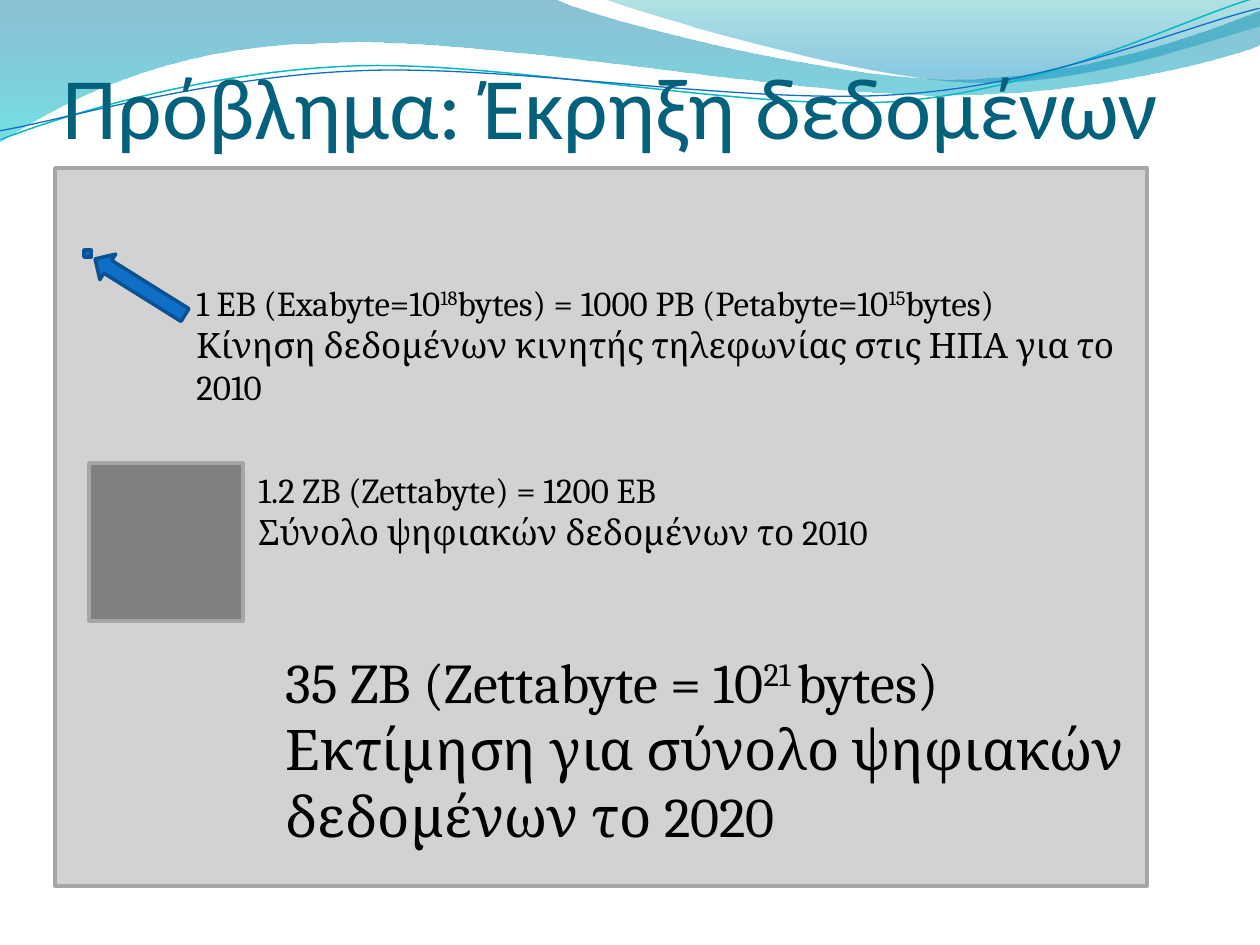
from dataclasses import dataclass

from pptx import Presentation
from pptx import util as u
from pptx.dml.color import RGBColor
from pptx.enum import shapes, text
from pptx.oxml.ns import qn
from lxml import etree

EMU_PER_PX = 914400 / 126


@dataclass(frozen=True)
class Theme:
    heading_font: str = "Calibri"
    body_font: str = "Cambria"
    title_size: int = 50
    body_size: int = 20
    forecast_size: int = 32
    title: str = "04617B"
    ink: str = "000000"
    panel: str = "BFBFBF"
    panel_edge: str = "A6A6A6"
    block: str = "808080"
    accent: str = "0F6FC6"
    accent_edge: str = "0B5292"
    teal_line: str = "0AB8BF"
    # Gradient stops: position, colour, opacity in percent
    wave: tuple = ((0, "0074A1", 45), (100, "00C6CF", 55))
    crest: tuple = ((0, "00A1A9", 30), (80, "008BBF", 45))


THEME = Theme()
STROKE_ROTATION = 357.3

# Curves: a start point, then lines (one point) or cubic curves (three points)
WAVE = [[(0, 0)], [(554, -1)],
        [(600, 21), (837, 79), (955, 79)], [(1074, 79), (1207, 33), (1260, 11)],
        [(1261, 45)], [(1239, 55), (1096, 96), (940, 95)],
        [(784, 95), (481, 35), (324, 43)], [(163, 45), (58, 105), (-1, 142)]]
CREST = [[(604, -1)], [(641, 14), (859, 78), (969, 82)],
         [(1079, 87), (1211, 40), (1260, 26)], [(1260, 0)]]
TEAL_STROKE = [[(-2, 110)], [(58, 90), (200, 52), (350, 53)],
               [(499, 53), (745, 118), (896, 114)], [(1049, 109), (1184, 45), (1260, 27)]]
BLUE_STROKE = [[(-2, 101)], [(57, 94), (207, 57), (357, 58)],
               [(509, 58), (750, 112), (902, 107)], [(1052, 104), (1188, 52), (1262, 38)]]


def px(value):
    return u.Emu(round(value * EMU_PER_PX))


def set_values(target, values):
    for name, value in values.items():
        setattr(target, name, value)


def set_opacity(fill_element, percents):
    for color, percent in zip(fill_element.iter(qn("a:srgbClr")), percents):
        etree.SubElement(color, qn("a:alpha")).set("val", str(percent * 1000))


def set_line(shape, color, width):
    shape.line.color.rgb = RGBColor.from_string(color)
    shape.line.width = u.Pt(width)


def add_curve(slide, curve, close):
    """Lay the points out as lines, then join each three into a cubic curve."""
    start, *rest = [(px(x), px(y)) for segment in curve for x, y in segment]
    builder = slide.shapes.build_freeform(*start)
    builder.add_line_segments(rest, close=close)
    shape = builder.convert_to_shape()
    shape.shadow.inherit = False
    lines = iter(list(shape._element.iter(qn("a:lnTo"))))
    for segment in curve[1:]:
        steps = [next(lines) for _ in segment]
        if len(steps) == 3:
            cubic = etree.Element(qn("a:cubicBezTo"))
            steps[0].addprevious(cubic)
            for step in steps:
                cubic.append(step[0])
                step.getparent().remove(step)
    return shape


def add_wave(slide, curve, stops):
    shape = add_curve(slide, curve, close=True)
    shape.line.fill.background()
    shape.fill.gradient()
    shape.fill.gradient_angle = 270
    for stop, (position, color, _) in zip(shape.fill.gradient_stops, stops):
        stop.position = position / 100
        stop.color.rgb = RGBColor.from_string(color)
    gradient = shape._element.spPr.find(qn("a:gradFill"))
    set_opacity(gradient, [opacity for _, _, opacity in stops])


def add_stroke(slide, curve, color, width):
    shape = add_curve(slide, curve, close=False)
    shape.rotation = STROKE_ROTATION
    shape.fill.background()
    set_line(shape, color, width)


def add_block(slide, box, fill, edge, kind=shapes.MSO_SHAPE.RECTANGLE, rotation=0, opacity=100):
    shape = slide.shapes.add_shape(kind, *map(px, box))
    shape.shadow.inherit = False
    shape.rotation = rotation
    shape.fill.solid()
    shape.fill.fore_color.rgb = RGBColor.from_string(fill)
    if opacity < 100:
        set_opacity(shape._element.spPr.find(qn("a:solidFill")), [opacity])
    set_line(shape, edge, 2)


def add_text(slide, box, paragraphs, size, font=THEME.body_font, color=THEME.ink, **frame_format):
    """Each paragraph is a list of runs; every second run is superscript."""
    frame = slide.shapes.add_textbox(*map(px, box)).text_frame
    set_values(frame, {"word_wrap": True, **frame_format})
    for index, runs in enumerate(paragraphs):
        paragraph = frame.add_paragraph() if index else frame.paragraphs[0]
        for position, words in enumerate(runs):
            run = paragraph.add_run()
            run.text = words
            set_values(run.font, {"name": font, "size": u.Pt(size)})
            run.font.color.rgb = RGBColor.from_string(color)
            if position % 2:
                run._r.get_or_add_rPr().set("baseline", "30000")


def add_caption(slide, box, paragraphs, size=THEME.body_size):
    add_text(slide, box, paragraphs, size, auto_size=text.MSO_AUTO_SIZE.SHAPE_TO_FIT_TEXT)


def main():
    presentation = Presentation()
    set_values(presentation, {"slide_width": px(1260), "slide_height": px(945)})
    slide = presentation.slides.add_slide(presentation.slide_layouts[6])

    # Waves along the top
    add_wave(slide, WAVE, THEME.wave)
    add_wave(slide, CREST, THEME.crest)
    add_stroke(slide, TEAL_STROKE, THEME.teal_line, 0.85)
    add_stroke(slide, BLUE_STROKE, THEME.accent, 0.75)

    # Title
    add_text(slide, (63, 0, 1134, 157), [["Πρόβλημα: Έκρηξη δεδομένων"]],
             THEME.title_size, THEME.heading_font, THEME.title,
             vertical_anchor=text.MSO_ANCHOR.BOTTOM, margin_left=0, margin_right=0,
             margin_top=px(6), margin_bottom=0)

    # Data volumes drawn as areas, with an arrow to the smallest
    add_block(slide, (55, 168, 1092, 718), THEME.panel, THEME.panel_edge, opacity=70)
    add_block(slide, (89, 463, 154, 158), THEME.block, THEME.panel_edge)
    add_block(slide, (84, 250, 7, 7), THEME.accent, THEME.accent_edge)
    add_block(slide, (125, 234, 30, 106), THEME.accent, THEME.accent_edge,
              shapes.MSO_SHAPE.DOWN_ARROW, rotation=122)

    # Captions
    add_caption(slide, (184, 275, 973, 97),
                [["1 EB (Exabyte=10", "18", "bytes) = 1000 PB (Petabyte=10", "15", "bytes)"],
                 ["Κίνηση δεδομένων κινητής τηλεφωνίας στις ΗΠΑ για το 2010"]])
    add_caption(slide, (246, 462, 810, 97),
                [["1.2 ZB (Zettabyte) = 1200 EB"],
                 ["Σύνολο ψηφιακών δεδομένων το 2010"]])
    add_caption(slide, (273, 641, 873, 217),
                [["35 ZB (Zettabyte = 10", "21 ", "bytes)"],
                 ["Εκτίμηση για σύνολο ψηφιακών δεδομένων το 2020"]], THEME.forecast_size)

    presentation.save("out.pptx")


if __name__ == "__main__":
    main()
